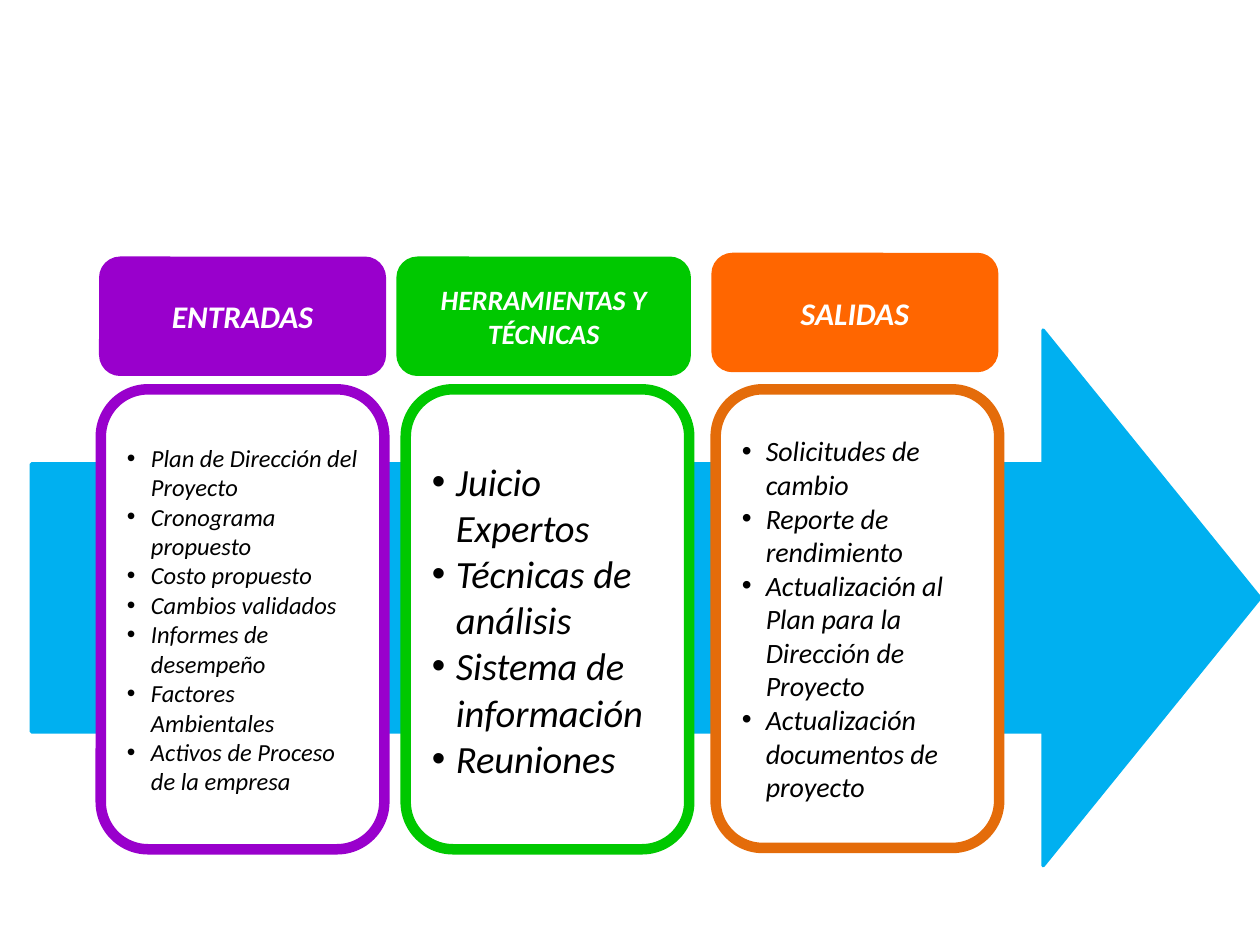
"""Build a process slide: inputs, tools and techniques, and outputs over an arrow."""
import dataclasses

import lxml.etree
import pptx
import pptx.dml.color
import pptx.enum.shapes
import pptx.enum.text
import pptx.oxml.ns
import pptx.util

Inches = pptx.util.Inches
Pt = pptx.util.Pt
Shapes = pptx.enum.shapes.MSO_SHAPE
Align = pptx.enum.text.PP_ALIGN


@dataclasses.dataclass(frozen=True)
class Theme:
    font: str = "Calibri"
    white: str = "FFFFFF"
    black: str = "000000"
    arrow: str = "00B0F0"
    purple: str = "9900CC"
    green: str = "00C800"
    orange: str = "FF6600"
    dark_orange: str = "E46C0A"
    heading: int = 18
    heading_small: int = 16
    body_small: int = 14
    body_medium: int = 16
    body_large: int = 22
    thin_line: int = 2
    thick_line: int = 6
    bullet_indent: float = 0.19


class ProcessSlide:
    def __init__(self, slide, theme):
        self.slide = slide
        self.theme = theme

    def box(self, kind, bounds, fill, line, line_width):
        shape = self.slide.shapes.add_shape(kind, *map(Inches, bounds))
        shape.shadow.inherit = False
        shape.fill.solid()
        shape.fill.fore_color.rgb = pptx.dml.color.RGBColor.from_string(fill)
        shape.line.color.rgb = pptx.dml.color.RGBColor.from_string(line)
        shape.line.width = Pt(line_width)
        return shape

    def add_text(self, shape, texts, size, color, alignment, bold=False, bullets=False):
        frame = shape.text_frame
        frame.word_wrap = True
        frame.vertical_anchor = pptx.enum.text.MSO_ANCHOR.MIDDLE
        frame.text = "\n".join(texts)
        for paragraph in frame.paragraphs:
            paragraph.alignment = alignment
            if bullets:
                self.add_bullet(paragraph)
            paragraph.font.name = self.theme.font
            paragraph.font.size = Pt(size)
            paragraph.font.bold = bold
            paragraph.font.italic = True
            paragraph.font.color.rgb = pptx.dml.color.RGBColor.from_string(color)

    def add_bullet(self, paragraph):
        properties = paragraph._p.get_or_add_pPr()
        indent = Inches(self.theme.bullet_indent)
        properties.set("marL", str(indent))
        properties.set("indent", str(-indent))
        qualify = pptx.oxml.ns.qn
        lxml.etree.SubElement(properties, qualify("a:buFont"), typeface="Arial")
        lxml.etree.SubElement(properties, qualify("a:buChar"), char="•")

    def arrow(self, bounds):
        color = self.theme.arrow
        shape = self.box(Shapes.RIGHT_ARROW, bounds, color, color, self.theme.thin_line)
        shape.adjustments[0] = 0.5
        shape.adjustments[1] = 0.405

    def card(self, bounds, color, items, size):
        theme = self.theme
        shape = self.box(Shapes.ROUNDED_RECTANGLE, bounds, theme.white, color, theme.thick_line)
        self.add_text(shape, items, size, theme.black, Align.LEFT, bullets=True)

    def header(self, bounds, color, title, size):
        theme = self.theme
        shape = self.box(Shapes.ROUNDED_RECTANGLE, bounds, color, color, theme.thin_line)
        self.add_text(shape, [title], size, theme.white, Align.CENTER, bold=True)


def main():
    theme = Theme()
    presentation = pptx.Presentation()
    presentation.slide_width = Inches(10)
    presentation.slide_height = Inches(7.5)
    slide = presentation.slides.add_slide(presentation.slide_layouts[6])
    process = ProcessSlide(slide, theme)

    process.arrow((0.25, 2.62, 9.75, 4.25))

    cards = [
        (0.8, 3.65, theme.purple, theme.body_small, [
            "Plan de Dirección del Proyecto",
            "Cronograma propuesto",
            "Costo propuesto",
            "Cambios validados",
            "Informes de desempeño",
            "Factores Ambientales",
            "Activos de Proceso de la empresa",
        ]),
        (3.22, 3.65, theme.green, theme.body_large, [
            "Juicio Expertos",
            "Técnicas de análisis",
            "Sistema de información",
            "Reuniones",
        ]),
        (5.68, 3.64, theme.dark_orange, theme.body_medium, [
            "Solicitudes de cambio",
            "Reporte de rendimiento",
            "Actualización al Plan para la Dirección de Proyecto",
            "Actualización documentos de proyecto",
        ]),
    ]
    for left, height, color, size, items in cards:
        process.card((left, 3.09, 2.25, height), color, items, size)

    headers = [
        (0.8, 2.05, 2.25, theme.purple, "ENTRADAS", theme.heading),
        (3.16, 2.05, 2.31, theme.green, "HERRAMIENTAS Y TÉCNICAS", theme.heading_small),
        (5.66, 2.02, 2.25, theme.orange, "SALIDAS", theme.heading),
    ]
    for left, top, width, color, title, size in headers:
        process.header((left, top, width, 0.92), color, title, size)

    presentation.save("out.pptx")


if __name__ == "__main__":
    main()
